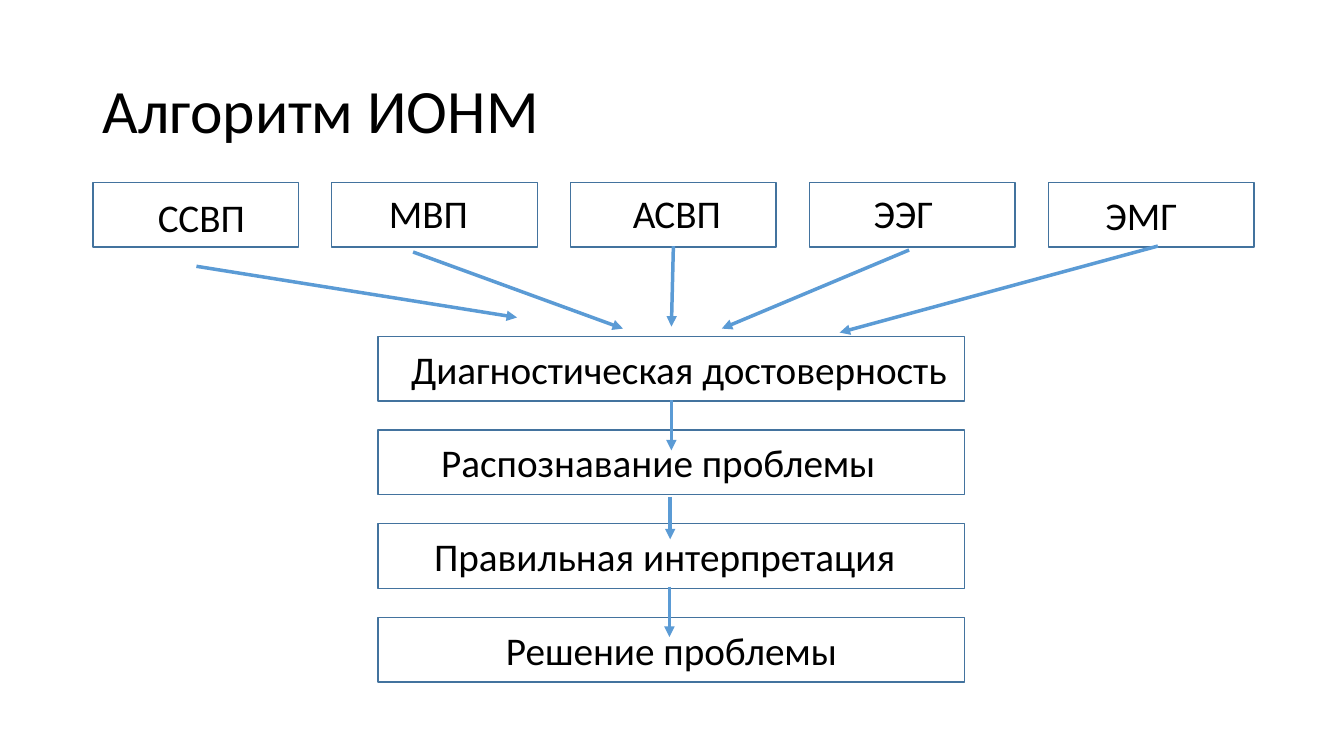
"""Build the slide showing the intraoperative monitoring algorithm."""
from lxml import etree
from pptx import Presentation
from pptx.dml.color import RGBColor
from pptx.enum.shapes import MSO_CONNECTOR, MSO_SHAPE
from pptx.enum.text import MSO_ANCHOR
from pptx.oxml.ns import qn
from pptx.util import Cm, Pt

RECTANGLE = MSO_SHAPE.RECTANGLE
STRAIGHT = MSO_CONNECTOR.STRAIGHT
TOP, MIDDLE = MSO_ANCHOR.TOP, MSO_ANCHOR.MIDDLE
BLACK = RGBColor(0x00, 0x00, 0x00)
OUTLINE = RGBColor(0x43, 0x73, 0x9E)
ARROW = RGBColor(0x5B, 0x9B, 0xD5)
FONT = "Calibri"

TITLE = "Алгоритм ИОНМ"
# label, label left, label top
METHODS = [
    ("ССВП", 3.73, 4.88),
    ("МВП", 9.55, 4.78),
    ("АСВП", 15.7, 4.78),
    ("ЭЭГ", 21.77, 4.78),
    ("ЭМГ", 27.61, 4.83),
]
STEPS = [
    ("Диагностическая достоверность", 10.11),
    ("Распознавание проблемы", 10.87),
    ("Правильная интерпретация", 10.69),
    ("Решение проблемы", 12.5),
]
ARROWS = [
    ((4.95, 6.71), (13.03, 8.0)),
    ((10.41, 6.35), (15.7, 8.28)),
    ((16.97, 6.2), (16.92, 8.23)),
    ((22.91, 6.3), (18.19, 8.28)),
    ((29.18, 6.2), (21.16, 8.38)),
    ((16.92, 10.08), (16.92, 11.35)),
    ((16.89, 12.52), (16.89, 13.59)),
    ((16.87, 14.78), (16.87, 16.05)),
]

BOX_HEIGHT = 1.63
METHOD_LEFT, METHOD_TOP, METHOD_WIDTH, METHOD_PITCH = 2.34, 4.6, 5.18, 6.02
STEP_LEFT, STEP_TOP, STEP_WIDTH, STEP_PITCH = 9.53, 8.48, 14.78, 2.36
STEP_LABEL_DROP = 0.22


def add_label(slide, text, left, top, width, height, size=28, anchor=TOP):
    frame = slide.shapes.add_textbox(Cm(left), Cm(top), Cm(width), Cm(height)).text_frame
    frame.word_wrap = True
    frame.vertical_anchor = anchor
    frame.text = text
    paragraph = frame.paragraphs[0]
    paragraph.line_spacing = 0.9
    font = paragraph.runs[0].font
    font.name, font.size = FONT, Pt(size)
    font.color.rgb = BLACK


def add_box(slide, left, top, width):
    box = slide.shapes.add_shape(RECTANGLE, Cm(left), Cm(top), Cm(width), Cm(BOX_HEIGHT))
    box.shadow.inherit = False
    box.fill.background()
    box.line.color.rgb = OUTLINE
    box.line.width = Pt(1)


def add_arrow(slide, start, end):
    arrow = slide.shapes.add_connector(STRAIGHT, *map(Cm, start + end))
    arrow.line.color.rgb = ARROW
    arrow.line.width = Pt(2.5)
    etree.SubElement(arrow.line._get_or_add_ln(), qn("a:tailEnd"), type="triangle")
    etree.SubElement(arrow._element.spPr, qn("a:effectLst"))


def main():
    deck = Presentation()
    deck.slide_width, deck.slide_height = Cm(33.87), Cm(19.05)
    slide = deck.slides.add_slide(deck.slide_layouts[6])

    add_label(slide, TITLE, 2.34, 1.02, 29.21, 3.68, size=44, anchor=MIDDLE)
    for index, (method, left, top) in enumerate(METHODS):
        add_box(slide, METHOD_LEFT + index * METHOD_PITCH, METHOD_TOP, METHOD_WIDTH)
        add_label(slide, method, left, top, 3, 1)
    for index, (step, left) in enumerate(STEPS):
        top = STEP_TOP + index * STEP_PITCH
        add_box(slide, STEP_LEFT, top, STEP_WIDTH)
        add_label(slide, step, left, top + STEP_LABEL_DROP, STEP_WIDTH, 1)
    for start, end in ARROWS:
        add_arrow(slide, start, end)

    deck.save("out.pptx")


if __name__ == "__main__":
    main()
